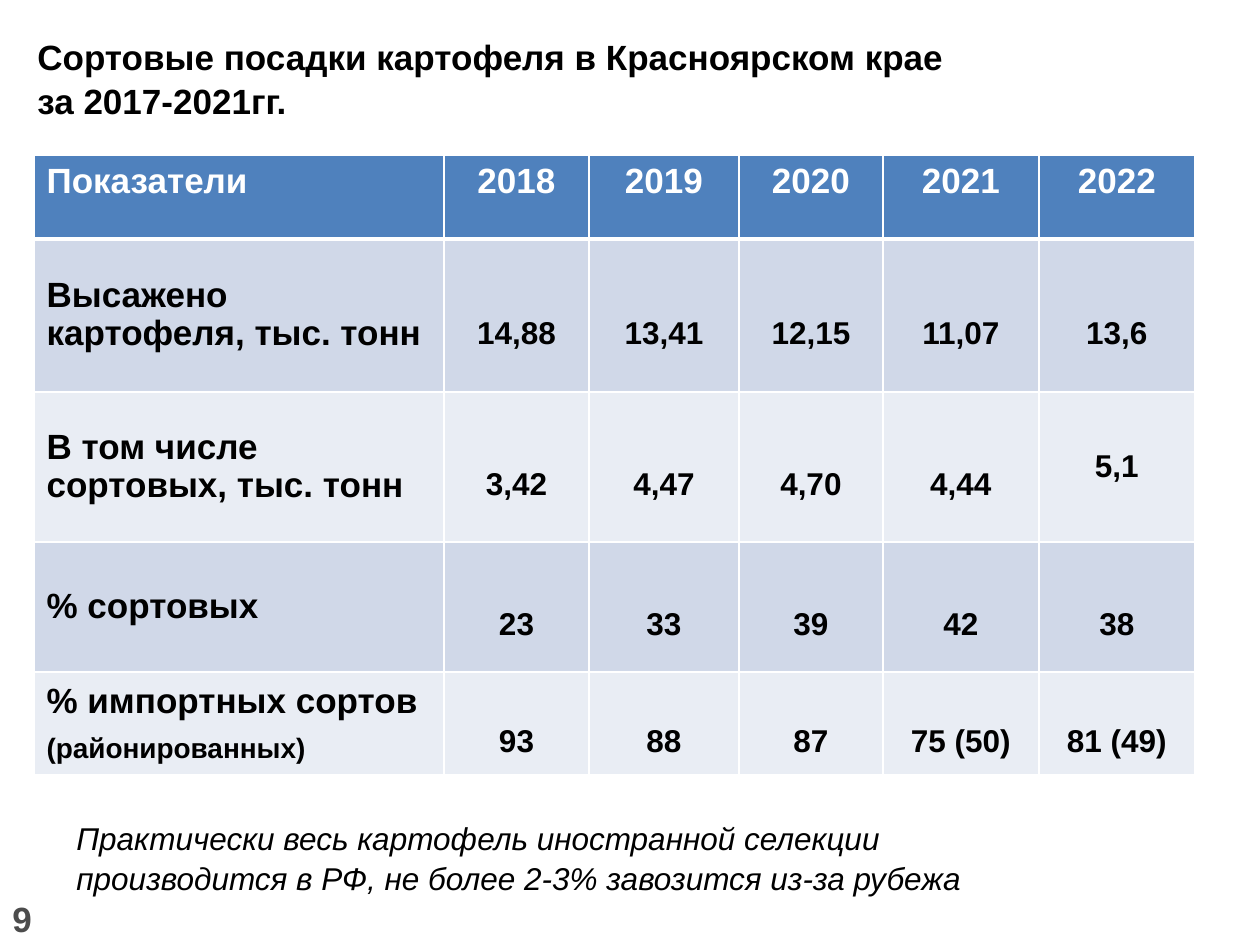
from dataclasses import dataclass

from lxml import etree
from pptx import Presentation
from pptx.dml.color import RGBColor
from pptx.enum.text import MSO_ANCHOR, PP_ALIGN
from pptx.oxml.ns import qn
from pptx.util import Pt

LEFT, CENTER = PP_ALIGN.LEFT, PP_ALIGN.CENTER
TOP, MIDDLE = MSO_ANCHOR.TOP, MSO_ANCHOR.MIDDLE
EMU_PER_PX = 914400 / 126


@dataclass(frozen=True)
class Theme:
    font: str = "Arial"
    black: str = "000000"
    white: str = "FFFFFF"
    gray: str = "4C4C4C"
    header: str = "4F81BD"
    bands: tuple = ("D0D8E8", "E9EDF4")
    large: int = 20
    medium: int = 18
    small: int = 16


THEME = Theme()

TITLE = ["Сортовые посадки картофеля в Красноярском крае", "за 2017-2021гг."]
NOTE = ["Практически весь картофель иностранной селекции производится в РФ, "
        "не более 2-3% завозится из-за рубежа"]
HEADINGS = ["Показатели", "2018", "2019", "2020", "2021", "2022"]
INDICATORS = [
    (["Высажено", "картофеля, тыс. тонн"], ["14,88", "13,41", "12,15", "11,07", "13,6"]),
    (["В том числе сортовых, тыс. тонн"], ["3,42", "4,47", "4,70", "4,44", "5,1"]),
    (["% сортовых"], ["23", "33", "39", "42", "38"]),
    (["% импортных сортов"], ["93", "88", "87", "75 (50)", "81 (49)"]),
]
IMPORT_REMARK = "(районированных)"
RAISED_VALUE = "5,1"
COLUMN_WIDTHS = [410, 145, 150, 144, 156, 156]
ROW_HEIGHTS = [84, 153, 150, 130, 103]
VALUE_TOP_MARGIN = 42


def px(length):
    return round(length * EMU_PER_PX)


def write(paragraph, lines, size, color, bold=False, italic=False,
          align=LEFT, spacing=1.0):
    """Fill a paragraph with lines parted by line breaks."""
    paragraph.alignment = align
    paragraph.line_spacing = spacing
    for index, line in enumerate(lines):
        if index:
            paragraph.add_line_break()
        run = paragraph.add_run()
        run.text = line
        run.font.name = THEME.font
        run.font.size = Pt(size)
        run.font.bold = bold
        run.font.italic = italic
        run.font.color.rgb = RGBColor.from_string(color)


def add_text(slide, box, lines, size, color, anchor=TOP, **style):
    shape = slide.shapes.add_textbox(*map(px, box))
    frame = shape.text_frame
    frame.word_wrap = True
    frame.vertical_anchor = anchor
    write(frame.paragraphs[0], lines, size, color, **style)


def style_cell(cell, fill, anchor, bottom_width=1):
    """Set fill, anchor and white borders; borders must precede the fill."""
    cell.vertical_anchor = anchor
    properties = cell._tc.get_or_add_tcPr()
    widths = {"a:lnL": 1, "a:lnR": 1, "a:lnT": 1, "a:lnB": bottom_width}
    for tag, width in widths.items():
        line = etree.SubElement(properties, qn(tag), w=str(Pt(width)))
        solid = etree.SubElement(line, qn("a:solidFill"))
        etree.SubElement(solid, qn("a:srgbClr"), val=THEME.white)
    cell.fill.solid()
    cell.fill.fore_color.rgb = RGBColor.from_string(fill)


def fill_header(table):
    for column, heading in enumerate(HEADINGS):
        cell = table.cell(0, column)
        style_cell(cell, THEME.header, TOP, bottom_width=3)
        write(cell.text_frame.paragraphs[0], [heading], THEME.large, THEME.white,
              bold=True, align=CENTER if column else LEFT)


def fill_indicator(table, row, label, values):
    fill = THEME.bands[(row - 1) % 2]
    label_cell = table.cell(row, 0)
    style_cell(label_cell, fill, MIDDLE)
    write(label_cell.text_frame.paragraphs[0], label, THEME.large, THEME.black,
          bold=True, spacing=0.97)
    for column, value in enumerate(values, start=1):
        cell = table.cell(row, column)
        style_cell(cell, fill, MIDDLE)
        if value != RAISED_VALUE:
            cell.margin_top = px(VALUE_TOP_MARGIN)
        write(cell.text_frame.paragraphs[0], [value], THEME.medium, THEME.black,
              bold=True, align=CENTER)


def add_indicator_table(slide, left, top):
    frame = slide.shapes.add_table(
        len(ROW_HEIGHTS), len(COLUMN_WIDTHS), px(left), px(top),
        px(sum(COLUMN_WIDTHS)), px(sum(ROW_HEIGHTS)))
    table = frame.table
    for column, width in zip(table.columns, COLUMN_WIDTHS):
        column.width = px(width)
    for row, height in zip(table.rows, ROW_HEIGHTS):
        row.height = px(height)
    fill_header(table)
    for row, (label, values) in enumerate(INDICATORS, start=1):
        fill_indicator(table, row, label, values)
    remark = table.cell(len(INDICATORS), 0).text_frame.add_paragraph()
    remark.space_before = Pt(7)
    write(remark, [IMPORT_REMARK], THEME.small, THEME.black, bold=True)


def main():
    presentation = Presentation()
    presentation.slide_width = px(1260)
    presentation.slide_height = px(945)
    slide = presentation.slides.add_slide(presentation.slide_layouts[6])
    add_text(slide, (25, 26, 985, 103), TITLE, THEME.large, THEME.black,
             anchor=MIDDLE, bold=True, spacing=1.05)
    add_indicator_table(slide, 34, 155)
    add_text(slide, (64, 810, 912, 89), NOTE, THEME.medium, THEME.black,
             italic=True, spacing=1.07)
    add_text(slide, (0, 903, 74, 30), ["9"], THEME.large, THEME.gray,
             anchor=MIDDLE, bold=True)
    presentation.save("out.pptx")


if __name__ == "__main__":
    main()
